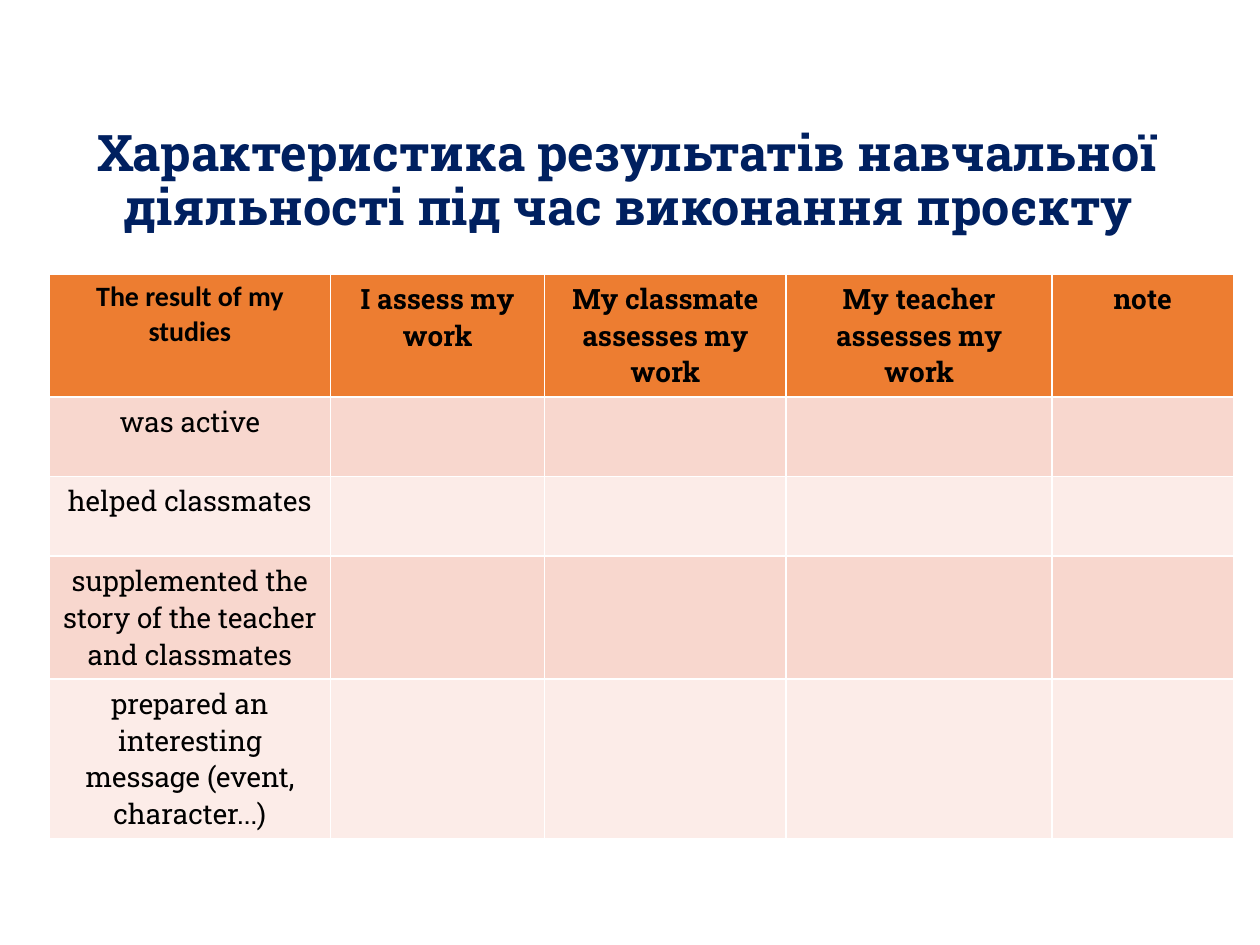
from pptx import Presentation
from pptx.dml.color import RGBColor
from pptx.enum.text import MSO_ANCHOR, MSO_AUTO_SIZE, PP_ALIGN
from pptx.util import Pt

COLORS = {
    "title": "002060",
    "text": "000000",
    "header": "ED7D31",
    "odd_row": "F8D7CE",
    "even_row": "FCECE8",
}
SLAB = "Roboto Slab"
TITLE = "Характеристика результатів навчальної діяльності під час виконання проєкту"
HEADERS = [
    "The result of my studies",
    "I assess my work",
    "My classmate assesses my work",
    "My teacher assesses my work",
    "note",
]
RESULTS = [
    "was active",
    "helped classmates",
    "supplemented the story of the teacher and classmates",
    "prepared an interesting message (event, character...)",
]
COLUMN_WIDTHS = [160.5, 122.5, 138, 152, 103.5]
ROW_HEIGHTS = [69.5, 45.5, 45.5, 70, 91]


def color(name):
    return RGBColor.from_string(COLORS[name])


def write(paragraph, text, color_name, **font_format):
    paragraph.alignment = PP_ALIGN.CENTER
    run = paragraph.add_run()
    run.text = text
    run.font.color.rgb = color(color_name)
    for name, value in font_format.items():
        setattr(run.font, name, value)


def place_title(slide, left, top, width, height):
    title = slide.shapes.title
    box = {"left": left, "top": top, "width": width, "height": height}
    for name, value in box.items():
        setattr(title, name, Pt(value))
    frame_format = {
        "word_wrap": True,
        "auto_size": MSO_AUTO_SIZE.NONE,
        "vertical_anchor": MSO_ANCHOR.MIDDLE,
    }
    for name, value in frame_format.items():
        setattr(title.text_frame, name, value)
    paragraph = title.text_frame.paragraphs[0]
    paragraph.line_spacing = 0.9
    write(paragraph, TITLE, "title", name=SLAB, size=Pt(28.8), bold=True)


def place_table(slide, left, top):
    table = slide.shapes.add_table(
        len(ROW_HEIGHTS), len(COLUMN_WIDTHS), Pt(left), Pt(top),
        Pt(sum(COLUMN_WIDTHS)), Pt(sum(ROW_HEIGHTS)),
    ).table
    for column, width in zip(table.columns, COLUMN_WIDTHS):
        column.width = Pt(width)

    texts = [HEADERS] + [[result] for result in RESULTS]
    for row_index, (row, height) in enumerate(zip(table.rows, ROW_HEIGHTS)):
        row.height = Pt(height)
        is_header = row_index == 0
        band = "odd_row" if row_index % 2 else "even_row"
        for cell in row.cells:
            cell.fill.solid()
            cell.fill.fore_color.rgb = color("header" if is_header else band)
        for column_index, text in enumerate(texts[row_index]):
            font_name = "Calibri" if row_index == column_index == 0 else SLAB
            paragraph = table.cell(row_index, column_index).text_frame.paragraphs[0]
            write(paragraph, text, "text", name=font_name, size=Pt(16), bold=is_header)


def main():
    presentation = Presentation()
    presentation.slide_width = Pt(720)
    presentation.slide_height = Pt(540)
    slide = presentation.slides.add_slide(presentation.slide_layouts[5])
    place_title(slide, 48, 52, 621, 104)
    place_table(slide, 28.3, 156.5)
    presentation.save("out.pptx")


if __name__ == "__main__":
    main()
